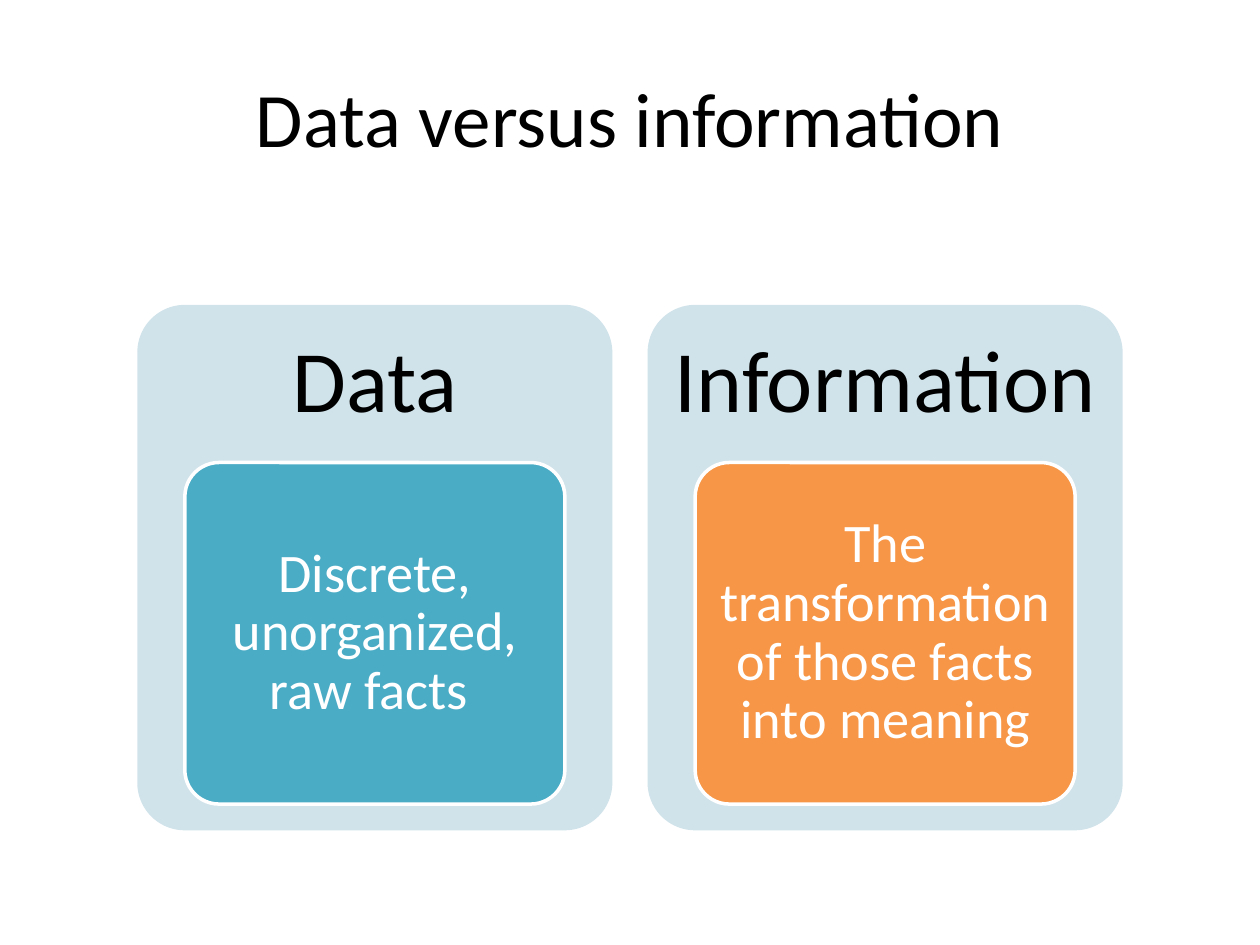
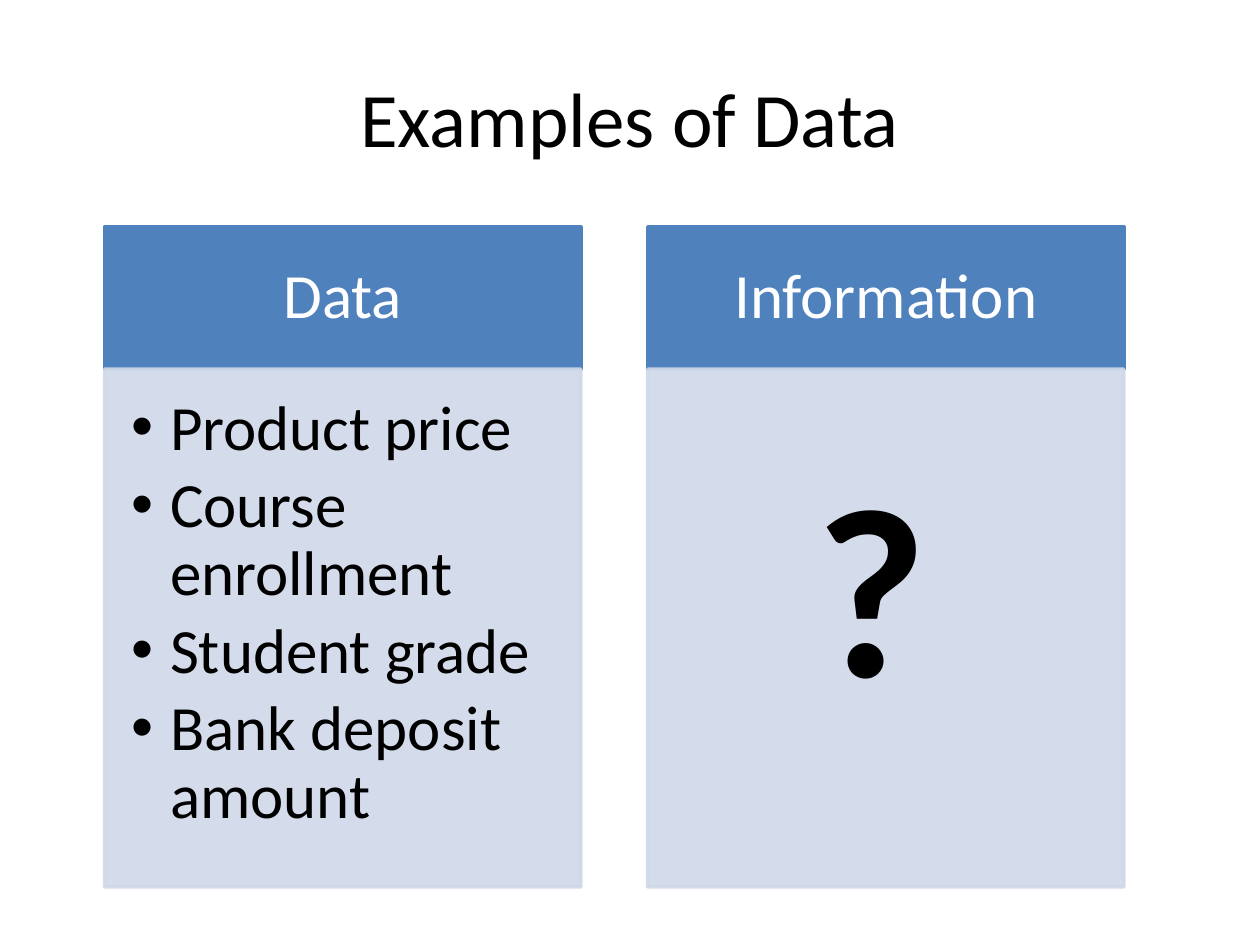
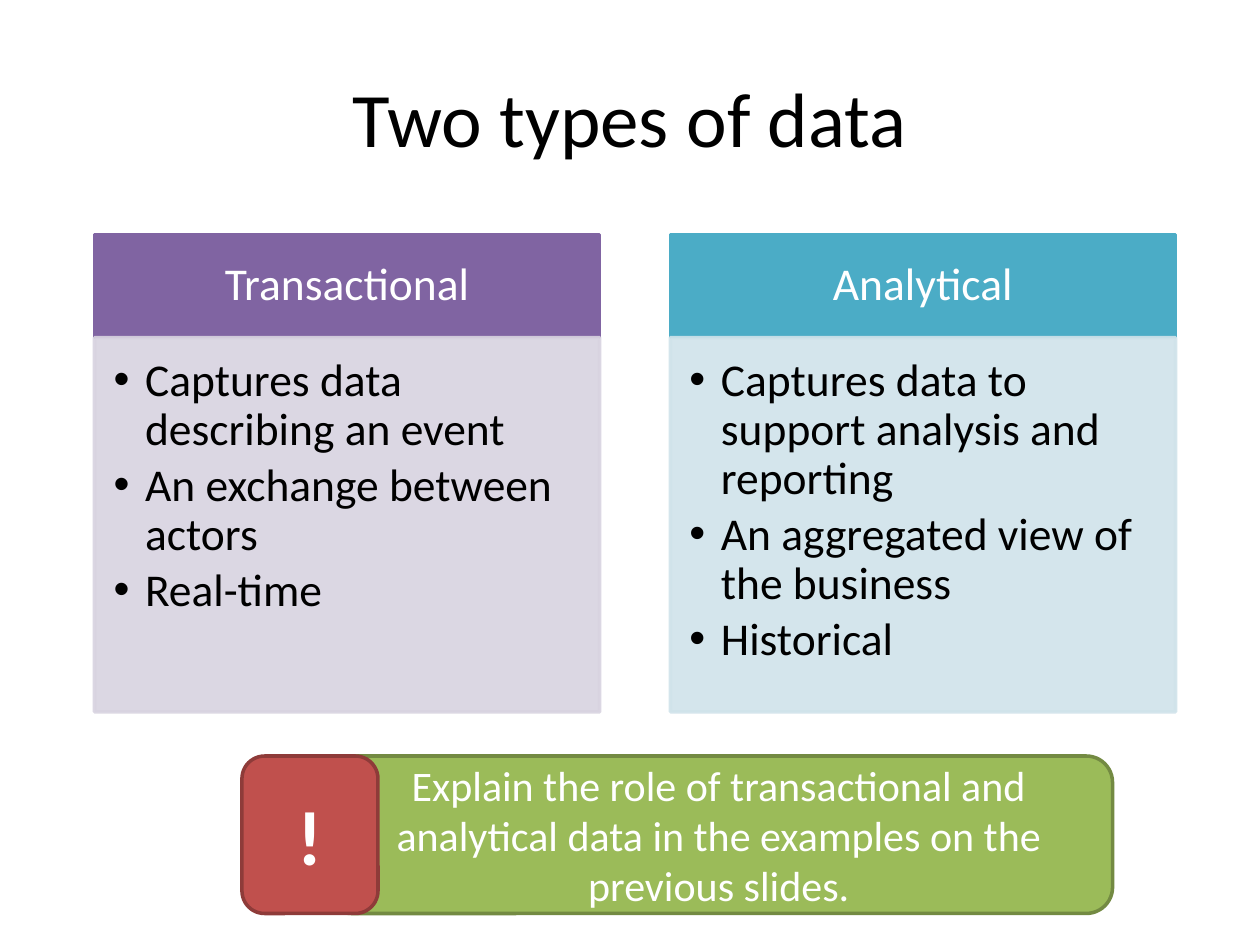
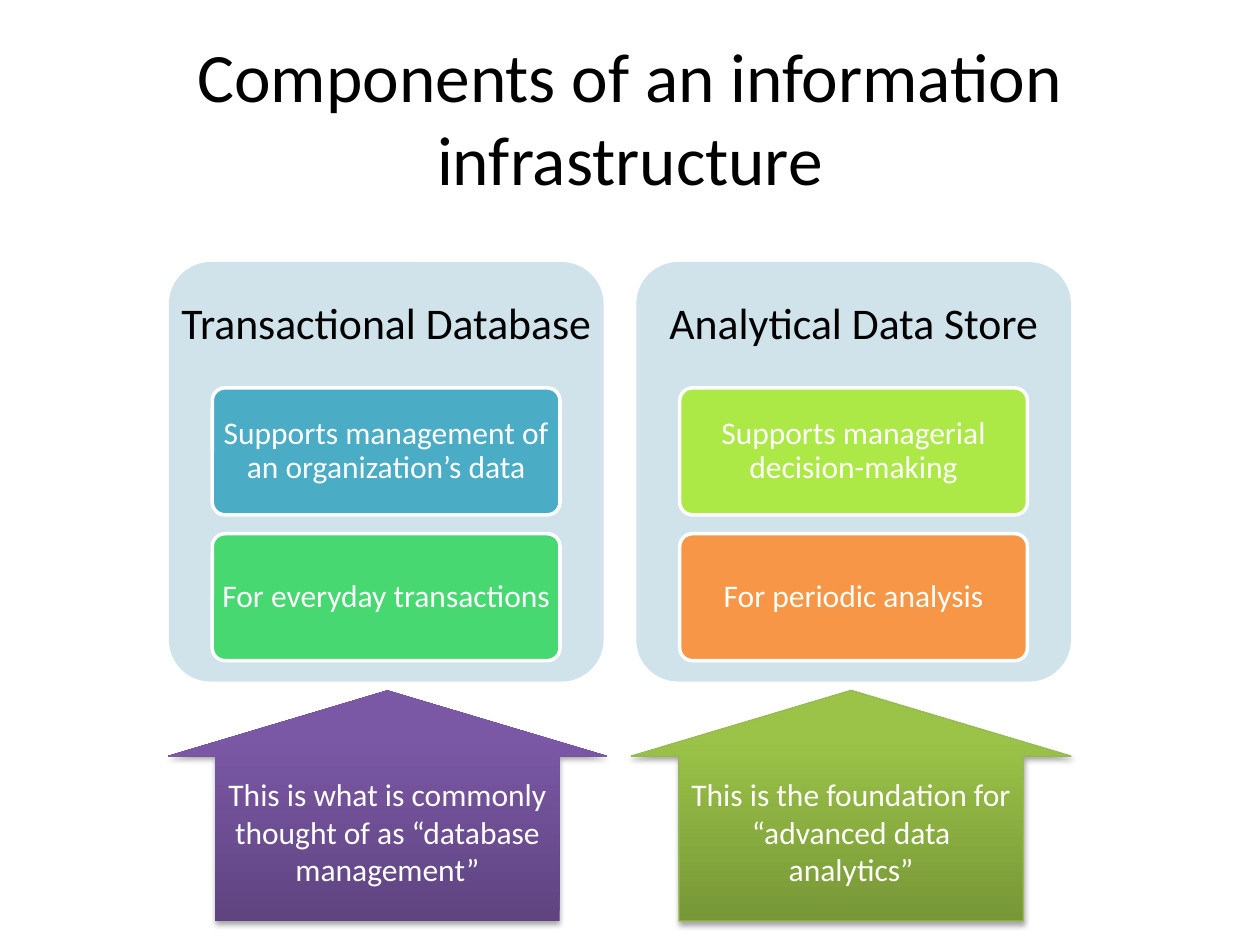
"""Build four slides on data, information and their infrastructure."""
from lxml import etree
from pptx import Presentation
from pptx.dml.color import RGBColor
from pptx.enum.shapes import MSO_SHAPE
from pptx.enum.text import MSO_ANCHOR, PP_ALIGN
from pptx.oxml.ns import qn
from pptx.util import Inches, Pt

RECT, ROUND, ARROW = MSO_SHAPE.RECTANGLE, MSO_SHAPE.ROUNDED_RECTANGLE, MSO_SHAPE.UP_ARROW
TOP, MIDDLE = MSO_ANCHOR.TOP, MSO_ANCHOR.MIDDLE
LEFT, CENTER = PP_ALIGN.LEFT, PP_ALIGN.CENTER
rgb = RGBColor.from_string

FONT = "Calibri"
BLACK, WHITE = "000000", "FFFFFF"
BLUE, TEAL, PURPLE, ORANGE = "4F81BD", "4BACC6", "8064A2", "F79646"
GREEN, RED, MINT, LIME = "9BBB59", "C0504D", "47D872", "ACE946"
PALE_TEAL, PALE_BLUE, PALE_PURPLE = "D0E3EA", "D0D8E8", "D8D3E0"


def write(sp, text, size, color=WHITE, bold=False, align=CENTER, anchor=MIDDLE,
          ins=(0.1, 0.05, 0.1, 0.05), spacing=None, after=0, bullet=0, wrap=True):
    tf = sp.text_frame
    tf.word_wrap = wrap
    tf.vertical_anchor = anchor
    tf.margin_left, tf.margin_top, tf.margin_right, tf.margin_bottom = map(Inches, ins)
    for i, line in enumerate(text.split("\n")):
        p = tf.add_paragraph() if i else tf.paragraphs[0]
        p.alignment = align
        p.space_after = Pt(after)
        if spacing:
            p.line_spacing = spacing
        if bullet:
            pPr = p._p.get_or_add_pPr()
            pPr.set("marL", str(Inches(bullet)))
            pPr.set("indent", str(-Inches(bullet)))
            etree.SubElement(pPr, qn("a:buFont"), typeface="Arial")
            etree.SubElement(pPr, qn("a:buChar"), char="•")
        r = p.add_run()
        r.text = line
        r.font.name, r.font.size, r.font.bold = FONT, Pt(size), bold
        r.font.color.rgb = rgb(color)


def add_box(s, kind, at, fill, line=None, width=2, adj=(), alpha=None):
    sp = s.shapes.add_shape(kind, *map(Inches, at))
    sp.shadow.inherit = False
    sp.fill.solid()
    sp.fill.fore_color.rgb = rgb(fill)
    if line:
        sp.line.color.rgb = rgb(line)
        sp.line.width = Pt(width)
    else:
        sp.line.fill.background()
    for i, value in enumerate(adj):
        sp.adjustments[i] = value
    if alpha:
        for clr in sp._element.spPr.iter(qn("a:srgbClr")):
            etree.SubElement(clr, qn("a:alpha"), val=str(alpha * 1000))
    return sp


prs = Presentation()
prs.slide_width, prs.slide_height = Inches(10), Inches(7.5)

titles = [
    ("Data versus information", 44),
    ("Examples of Data", 44),
    ("Two types of data", 44),
    ("Components of an information infrastructure", 39.6),
]
slides = []
for title, size in titles:
    s = prs.slides.add_slide(prs.slide_layouts[6])
    sp = s.shapes.add_textbox(Inches(0.5), Inches(0.3), Inches(9), Inches(1.25))
    write(sp, title, size, BLACK)
    slides.append(s)
versus, examples, types, components = slides

# slide, left, top, width, height, step, heading size and inset, item size and insets, cards
card_groups = [
    (versus, 1.09, 2.42, 3.77, 4.17, 4.05, 50, 0.21, 31, (0.09, 0.06) * 2, [
        ("Data", [("Discrete, unorganized, raw facts ", TEAL)]),
        ("Information", [("The transformation of those facts into meaning", ORANGE)]),
    ]),
    (components, 1.34, 2.08, 3.45, 3.33, 3.71, 25, 0.1, 18, (0.05, 0.04) * 2, [
        ("Transactional Database", [("Supports management of an organization’s data", TEAL),
                                    ("For everyday transactions", MINT)]),
        ("Analytical Data Store", [("Supports managerial decision-making", LIME),
                                   ("For periodic analysis", ORANGE)]),
    ]),
]
gap = 0.15
for s, left, top, w, h, step, head_size, head_ins, size, ins, cards in card_groups:
    for i, (heading, items) in enumerate(cards):
        x = left + i * step
        add_box(s, ROUND, (x, top, w, h), PALE_TEAL, adj=[0.1])
        sp = s.shapes.add_textbox(Inches(x), Inches(top), Inches(w), Inches(0.3 * h))
        write(sp, heading, head_size, BLACK, ins=[head_ins] * 4, spacing=0.9)
        item_h = (0.65 * h - gap * (len(items) - 1)) / len(items)
        for j, (text, fill) in enumerate(items):
            y = top + 0.3 * h + j * (item_h + gap)
            sp = add_box(s, ROUND, (x + 0.1 * w, y, 0.8 * w, item_h), fill, WHITE, adj=[0.1])
            write(sp, text, size, ins=ins, spacing=0.9)

# slide, left, top, width, step, head height, body height, text size, bullet indent, panels
panel_groups = [
    (examples, 0.83, 1.8, 3.78, 4.31, 1.13, 4.11, 36, 0.31, [
        ("Data", BLUE, PALE_BLUE,
         "Product price\nCourse enrollment\nStudent grade\nBank deposit amount"),
        ("Information", BLUE, PALE_BLUE, ""),
    ]),
    (types, 0.75, 1.86, 4.01, 4.57, 0.82, 2.97, 26, 0.25, [
        ("Transactional", PURPLE, PALE_PURPLE,
         "Captures data describing an event\nAn exchange between actors\nReal-time"),
        ("Analytical", TEAL, PALE_TEAL,
         "Captures data to support analysis and reporting\n"
         "An aggregated view of the business\nHistorical"),
    ]),
]
for s, left, top, w, step, head_h, body_h, size, indent, panels in panel_groups:
    k = size / 36
    for i, (heading, fill, pale, text) in enumerate(panels):
        x = left + i * step
        sp = add_box(s, RECT, (x, top, w, head_h), fill, fill)
        write(sp, heading, size, ins=[0.28 * k, 0.16 * k] * 2, spacing=0.9)
        sp = add_box(s, RECT, (x, top + head_h, w, body_h), pale, pale, alpha=90)
        if text:
            write(sp, text, size, BLACK, align=LEFT, anchor=TOP, spacing=0.9, after=0.15 * size,
                  ins=[0.21 * k, 0.21 * k, 0.28 * k, 0.32 * k], bullet=indent)

sp = examples.shapes.add_textbox(Inches(6.37), Inches(3.41), Inches(1.38), Inches(2.42))
write(sp, "?", 138, BLACK, bold=True, align=LEFT, anchor=TOP, wrap=False)

sp = add_box(types, ROUND, (2.58, 6, 6.25, 1.25), GREEN, "738A42")
write(sp, "Explain the role of transactional and analytical data in the examples "
          "on the previous slides.", 24)
sp = add_box(types, ROUND, (1.92, 6, 1.08, 1.25), RED, "8E3B39")
write(sp, "!", 44, bold=True)

arrows = [
    (1.33, "This is what is commonly thought of as “database management”",
     "5F4480", "7B58A6", None),
    (5.01, "This is the foundation for “advanced data analytics”",
     "779737", "9BC348", "98B955"),
]
for x, text, dark, light, line in arrows:
    sp = add_box(components, ARROW, (x, 5.48, 3.49, 1.83), dark, line, 0.75, [0.783, 0.285])
    sp.fill.gradient()
    sp.fill.gradient_angle = 90
    for stop, color, position in zip(sp.fill.gradient_stops, (dark, light), (0, 0.8)):
        stop.color.rgb = rgb(color)
        stop.position = position
    effects = sp._element.spPr.find(qn("a:effectLst"))
    shadow = etree.SubElement(effects, qn("a:outerShdw"), blurRad=str(Pt(3.1)),
                              dist=str(Pt(1.8)), dir="5400000", rotWithShape="0")
    clr = etree.SubElement(shadow, qn("a:srgbClr"), val=BLACK)
    etree.SubElement(clr, qn("a:alpha"), val="35000")
    write(sp, text, 18)

prs.save("out.pptx")
